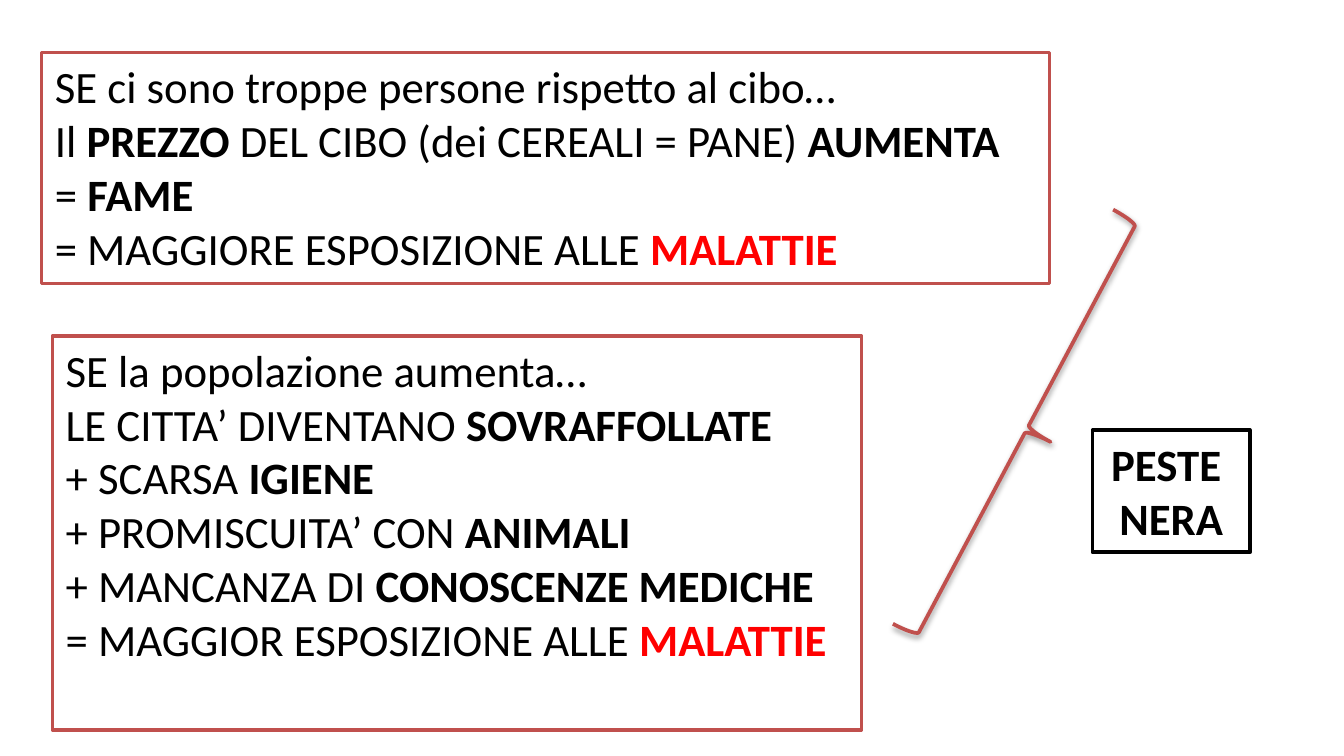
from lxml.etree import SubElement
from pptx import Presentation
from pptx.dml.color import RGBColor
from pptx.enum.shapes import MSO_SHAPE
from pptx.enum.text import MSO_ANCHOR, PP_ALIGN
from pptx.oxml.ns import qn
from pptx.util import Inches, Pt

BLACK, WHITE, RED, BRICK = "000000", "FFFFFF", "FF0000", "C0504D"
PLAIN = {"bold": False, "color": BLACK}
BOLD = {"bold": True, "color": BLACK}
ALERT = {"bold": True, "color": RED}

FOOD = [
    [("SE ci sono troppe persone rispetto al cibo…", PLAIN)],
    [("Il ", PLAIN), ("PREZZO", BOLD),
     (" DEL CIBO (dei CEREALI = PANE) ", PLAIN), ("AUMENTA", BOLD)],
    [("= ", PLAIN), ("FAME", BOLD)],
    [("= MAGGIORE ESPOSIZIONE ALLE ", PLAIN), ("MALATTIE", ALERT)],
]
CROWD = [
    [("SE la popolazione aumenta…", PLAIN)],
    [("LE CITTA’ DIVENTANO ", PLAIN), ("SOVRAFFOLLATE", BOLD)],
    [("+ SCARSA ", PLAIN), ("IGIENE", BOLD)],
    [("+ PROMISCUITA’ CON ", PLAIN), ("ANIMALI", BOLD)],
    [("+ MANCANZA DI ", PLAIN), ("CONOSCENZE MEDICHE", BOLD)],
    [("= MAGGIOR ESPOSIZIONE ALLE ", PLAIN), ("MALATTIE", ALERT)],
]
PLAGUE = [[("PESTE ", BOLD)], [("NERA", BOLD)]]


def paint(text):
    return RGBColor.from_string(text)


def add_shape(slide, kind, box, line):
    shape = slide.shapes.add_shape(kind, *map(Inches, box))
    shape.shadow.inherit = False
    shape.line.color.rgb = paint(line)
    shape.line.width = Pt(2)
    return shape


def add_panel(slide, box, rows, line=BRICK, align=PP_ALIGN.LEFT):
    panel = add_shape(slide, MSO_SHAPE.RECTANGLE, box, line)
    panel.fill.solid()
    panel.fill.fore_color.rgb = paint(WHITE)
    frame = panel.text_frame
    frame.word_wrap = True
    frame.vertical_anchor = MSO_ANCHOR.TOP
    for i, row in enumerate(rows):
        para = frame.add_paragraph() if i else frame.paragraphs[0]
        para.alignment = align
        for text, style in row:
            run = para.add_run()
            run.text = text
            font = {"name": "Calibri", "size": Pt(24), "bold": style["bold"]}
            for key, value in font.items():
                setattr(run.font, key, value)
            run.font.color.rgb = paint(style["color"])


def add_brace(slide, box, turn):
    brace = add_shape(slide, MSO_SHAPE.RIGHT_BRACE, box, BRICK)
    brace.fill.background()
    brace.rotation = turn
    effects = brace.element.spPr.find(qn("a:effectLst"))
    shadow = SubElement(effects, qn("a:outerShdw"), blurRad=str(Pt(3.1)),
                        dist=str(Pt(1.6)), dir="5400000", rotWithShape="0")
    color = SubElement(shadow, qn("a:srgbClr"), val=BLACK)
    SubElement(color, qn("a:alpha"), val="38000")


def main():
    deck = Presentation()
    deck.slide_width = Inches(10)
    deck.slide_height = deck.slide_width * 9 // 16
    slide = deck.slides.add_slide(deck.slide_layouts[6])
    add_panel(slide, (0.31, 0.39, 7.5, 1.72), FOOD)
    add_panel(slide, (0.39, 2.5, 6.02, 2.93), CROWD)
    add_panel(slide, (8.13, 3.2, 1.17, 0.91), PLAGUE, BLACK, PP_ALIGN.CENTER)
    add_brace(slide, (7.44, 1.45, 0.4, 3.49), 28)
    deck.save("out.pptx")


if __name__ == "__main__":
    main()
